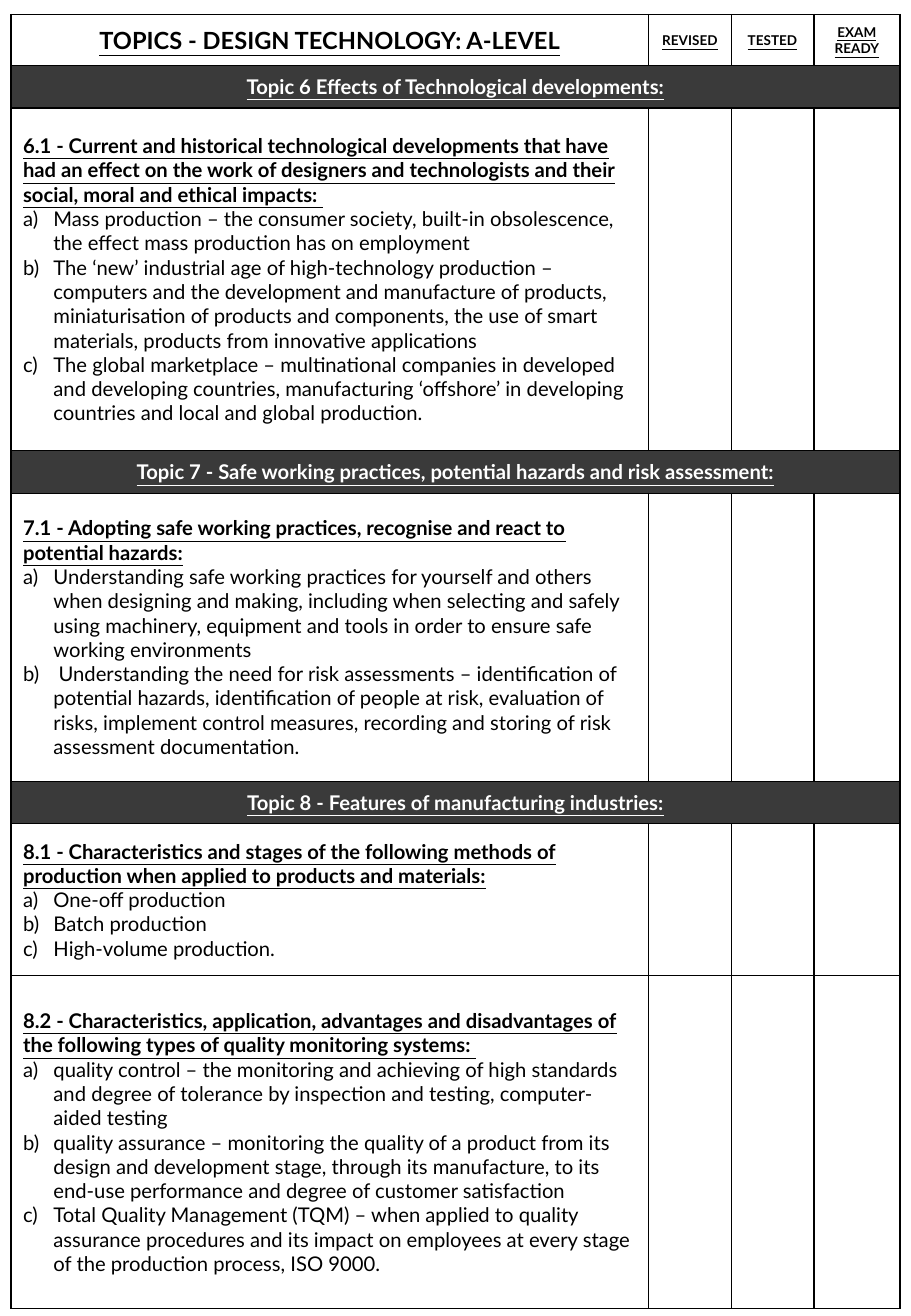
from dataclasses import dataclass

from lxml import etree
from pptx import Presentation
from pptx.dml.color import RGBColor
from pptx.enum.text import MSO_ANCHOR, PP_ALIGN
from pptx.oxml.ns import qn
from pptx.util import Inches, Pt

CENTER, LEFT = PP_ALIGN.CENTER, PP_ALIGN.LEFT
MIDDLE = MSO_ANCHOR.MIDDLE


@dataclass(frozen=True)
class Theme:
    font: str = "Lato"
    ink: str = "000000"
    paper: str = "FFFFFF"
    band: str = "3A3A3A"
    title: int = 14
    body: int = 12
    label: int = 8
    border: int = 1


THEME = Theme()
PAGE_WIDTH, PAGE_HEIGHT = 7.5, 10.83
TABLE_LEFT, TABLE_TOP = 0.09, 0.12
COLUMN_WIDTHS = [5.25, 0.68, 0.68, 0.71]
HEADER_HEIGHT, BAND_HEIGHT = 0.42, 0.35
LIST_INDENT = 0.25

TITLE = "TOPICS - DESIGN TECHNOLOGY: A-LEVEL"
CHECKS = ["REVISED", "TESTED", "EXAM READY"]

# Each topic: band title, then (row height, heading, lettered points)
TOPICS = [
    ("Topic 6 Effects of Technological developments:", [
        (2.82, "6.1 - Current and historical technological developments that have had an "
               "effect on the work of designers and technologists and their social, moral "
               "and ethical impacts: ", [
            "Mass production – the consumer society, built-in obsolescence, the effect "
            "mass production has on employment",
            "The ‘new’ industrial age of high-technology production – computers and the "
            "development and manufacture of products, miniaturisation of products and "
            "components, the use of smart materials, products from innovative applications",
            "The global marketplace – multinational companies in developed and developing "
            "countries, manufacturing ‘offshore’ in developing countries and local and "
            "global production.",
        ]),
    ]),
    ("Topic 7 - Safe working practices, potential hazards and risk assessment:", [
        (2.37, "7.1 - Adopting safe working practices, recognise and react to potential "
               "hazards:", [
            "Understanding safe working practices for yourself and others when designing "
            "and making, including when selecting and safely using machinery, equipment "
            "and tools in order to ensure safe working environments",
            " Understanding the need for risk assessments – identification of potential "
            "hazards, identification of people at risk, evaluation of risks, implement "
            "control measures, recording and storing of risk assessment documentation.",
        ]),
    ]),
    ("Topic 8 - Features of manufacturing industries:", [
        (1.25, "8.1 - Characteristics and stages of the following methods of production "
               "when applied to products and materials:", [
            "One-off production",
            "Batch production",
            "High-volume production.",
        ]),
        (2.74, "8.2 - Characteristics, application, advantages and disadvantages of the "
               "following types of quality monitoring systems: ", [
            "quality control – the monitoring and achieving of high standards and degree "
            "of tolerance by inspection and testing, computer-aided testing",
            "quality assurance – monitoring the quality of a product from its design and "
            "development stage, through its manufacture, to its end-use performance and "
            "degree of customer satisfaction",
            "Total Quality Management (TQM) – when applied to quality assurance procedures "
            "and its impact on employees at every stage of the production process, ISO 9000.",
        ]),
    ]),
]


def style_cell(cell, fill):
    """Give the cell a plain fill, middle anchoring and a border on all sides."""
    cell.vertical_anchor = MIDDLE
    cell.fill.solid()
    cell.fill.fore_color.rgb = RGBColor.from_string(fill)
    properties = cell._tc.get_or_add_tcPr()
    for position, side in enumerate(("lnL", "lnR", "lnT", "lnB")):
        line = etree.Element(qn(f"a:{side}"), w=str(Pt(THEME.border)))
        solid = etree.SubElement(line, qn("a:solidFill"))
        etree.SubElement(solid, qn("a:srgbClr"), val=THEME.ink)
        properties.insert(position, line)


def write_para(para, text, size=THEME.body, color=THEME.ink, align=LEFT, heading=True):
    para.text = text
    para.alignment = align
    font = para.font
    font.name, font.size = THEME.font, Pt(size)
    font.bold = font.underline = heading
    font.color.rgb = RGBColor.from_string(color)


def letter_para(para):
    """Number the paragraph a), b), c) with a hanging indent."""
    properties = para._p.get_or_add_pPr()
    properties.set("marL", str(Inches(LIST_INDENT)))
    properties.set("indent", str(-Inches(LIST_INDENT)))
    numbering = etree.Element(qn("a:buAutoNum"), type="alphaLcParenR")
    properties.insert(0, numbering)


def write_header(row):
    sizes = [THEME.title] + [THEME.label] * len(CHECKS)
    for cell, text, size in zip(row.cells, [TITLE, *CHECKS], sizes):
        style_cell(cell, THEME.paper)
        write_para(cell.text_frame.paragraphs[0], text, size, align=CENTER)


def write_band(row, text):
    cells = list(row.cells)
    for cell in cells:
        style_cell(cell, THEME.band)
    cells[0].merge(cells[-1])
    write_para(cells[0].text_frame.paragraphs[0], text, color=THEME.paper, align=CENTER)


def write_section(row, heading, points):
    for cell in row.cells:
        style_cell(cell, THEME.paper)
    frame = row.cells[0].text_frame
    write_para(frame.paragraphs[0], heading)
    for point in points:
        para = frame.add_paragraph()
        write_para(para, point, heading=False)
        letter_para(para)


def add_checklist(page):
    heights = [HEADER_HEIGHT]
    for _, sections in TOPICS:
        heights += [BAND_HEIGHT] + [height for height, _, _ in sections]
    table = page.shapes.add_table(
        len(heights), len(COLUMN_WIDTHS), Inches(TABLE_LEFT), Inches(TABLE_TOP),
        Inches(sum(COLUMN_WIDTHS)), Inches(sum(heights))).table
    table.first_row = table.horz_banding = False
    for column, width in zip(table.columns, COLUMN_WIDTHS):
        column.width = Inches(width)
    for row, height in zip(table.rows, heights):
        row.height = Inches(height)

    rows = iter(table.rows)
    write_header(next(rows))
    for band, sections in TOPICS:
        write_band(next(rows), band)
        for _, heading, points in sections:
            write_section(next(rows), heading, points)


def main():
    deck = Presentation()
    deck.slide_width, deck.slide_height = Inches(PAGE_WIDTH), Inches(PAGE_HEIGHT)
    page = deck.slides.add_slide(deck.slide_layouts[6])
    add_checklist(page)
    deck.save("out.pptx")


if __name__ == "__main__":
    main()
